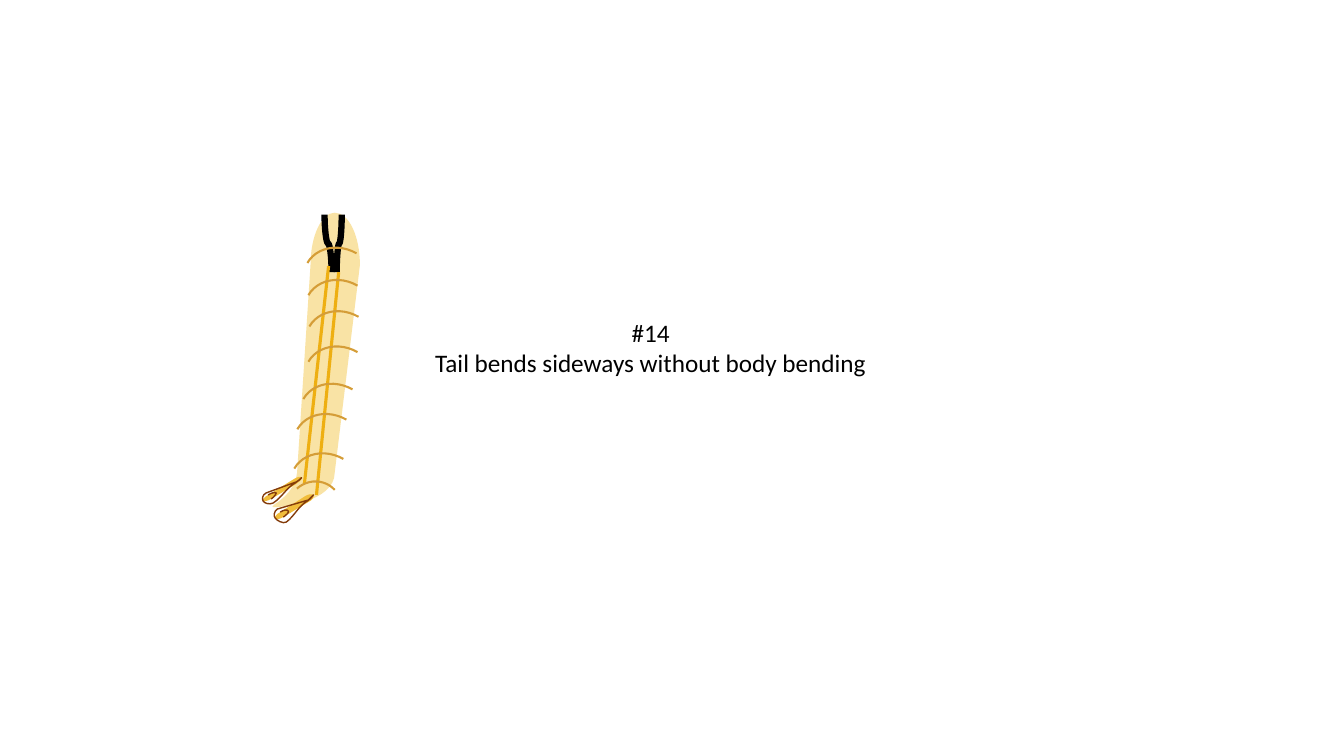
import math

from lxml import etree
from pptx import Presentation
from pptx import util as u
from pptx.dml import color
from pptx.enum import shapes, text
from pptx.oxml import ns

PX = 9144  # 100 px to the inch

# Outlines: a start point, then lines (x, y) and cubic curves (x1, y1, x2, y2, x, y)
BODY = [(357, 263), (332, 469), (332, 498, 277, 504, 271, 503),
        (265, 502, 295, 493, 295, 464), (308, 263),
        (308, 234, 319, 211, 332, 211), (346, 211, 357, 234, 357, 263)]

UPPER_CLAW = {
    "fill": [(294, 480), (269, 495), (265, 497, 261, 498, 261, 497),
             (260, 496, 262, 493, 266, 491), (292, 475),
             (295, 473, 299, 472, 299, 474), (300, 475, 298, 477, 294, 480)],
    "fold": [(266, 491), (269, 489, 273, 488, 274, 489),
             (274, 490, 272, 493, 269, 495)],
    "edge": [(293, 479), (284, 484, 280, 493, 271, 499),
             (267, 501, 262, 499, 261, 497), (260, 495, 260, 491, 264, 489),
             (294, 478), (298, 476, 300, 473, 299, 474),
             (299, 474, 296, 477, 293, 479)],
}
LOWER_CLAW = {
    "fill": [(306, 498), (281, 513), (277, 515, 274, 516, 273, 514),
             (272, 513, 274, 510, 278, 508), (303, 492),
             (306, 490, 310, 490, 311, 491), (312, 493, 310, 496, 306, 498)],
    "fold": [(278, 508), (281, 506, 285, 505, 286, 507),
             (287, 508, 284, 511, 281, 513)],
    "edge": [(305, 497), (296, 502, 292, 512, 284, 518),
             (281, 520, 274, 516, 273, 514), (271, 512, 272, 507, 275, 505),
             (306, 496), (309, 493, 311, 491, 311, 491),
             (311, 491, 308, 495, 305, 497)],
}
CLAW_FLAGS = {"fill": {"stroke": "0"}, "fold": {"fill": "none"},
              "edge": {"fill": "none"}}

# Left and top of each body ring
RINGS = [(305, 242), (306, 274), (307, 305), (306, 340),
         (301, 377), (295, 407), (292, 446)]


def px(length):
    return u.Emu(round(length * PX))


def rgb(value):
    return color.RGBColor.from_string(value)


def set_line(item, line, width):
    if line:
        item.line.color.rgb = rgb(line)
        item.line.width = u.Pt(width)
    else:
        item.line.fill.background()


def format_shape(shape, fill=None, line=None, width=1):
    shape.shadow.inherit = False
    if fill:
        shape.fill.solid()
        shape.fill.fore_color.rgb = rgb(fill)
    else:
        shape.fill.background()
    set_line(shape, line, width)


def add_child(parent, tag, **attributes):
    return etree.SubElement(parent, ns.qn(tag), **attributes)


def add_outline(slide, box, rotation, outlines, **style):
    """Draw (outline, flags) pairs as the curved paths of one rotated shape."""
    left, top, width, height = box
    builder = slide.shapes.build_freeform(px(left), px(top), scale=1.0)
    builder.add_line_segments([(px(left + width), px(top + height))], close=True)
    shape = builder.convert_to_shape()
    shape.rotation = rotation
    format_shape(shape, **style)
    cosine = math.cos(math.radians(rotation))
    sine = math.sin(math.radians(rotation))

    def add_point(parent, x, y):
        dx, dy = x - left - width / 2, y - top - height / 2
        add_child(parent, "a:pt",
                  x=str(px(width / 2 + dx * cosine + dy * sine)),
                  y=str(px(height / 2 - dx * sine + dy * cosine)))

    path_list = shape._element.spPr.find(".//" + ns.qn("a:pathLst"))
    path_list.clear()
    for outline, flags in outlines:
        route = add_child(path_list, "a:path", w=str(px(width)),
                          h=str(px(height)), **flags)
        for i, step in enumerate(outline):
            tag = "a:cubicBezTo" if len(step) == 6 else "a:lnTo" if i else "a:moveTo"
            command = add_child(route, tag)
            for x, y in zip(step[::2], step[1::2]):
                add_point(command, x, y)
        if outline[0] == outline[-1][-2:]:
            add_child(route, "a:close")


def add_claw(slide, box, rotation, claw):
    outlines = [(claw[part], flags) for part, flags in CLAW_FLAGS.items()]
    add_outline(slide, box, rotation, outlines, fill="F1BD3B", line="843C0B")


def add_line(slide, begin, end, line, width,
             kind=shapes.MSO_CONNECTOR.STRAIGHT, rotation=0):
    connector = slide.shapes.add_connector(kind, *map(px, begin + end))
    set_line(connector, line, width)
    properties = connector._element.spPr
    add_child(properties, "a:effectLst")
    if rotation:
        properties.find(ns.qn("a:xfrm")).set("rot", str(rotation * 60000))


def add_ring(slide, left, top, width=65, height=75, rotation=299.8):
    ring = slide.shapes.add_shape(shapes.MSO_SHAPE.ARC,
                                  *map(px, (left, top, width, height)))
    ring.rotation = rotation
    format_shape(ring, line="D59D37", width=1.5)


def add_text(slide, content, left, top, width, height, size=18,
             font="Calibri", ink="000000", align=text.PP_ALIGN.CENTER):
    box = slide.shapes.add_textbox(*map(px, (left, top, width, height)))
    frame = box.text_frame
    frame.word_wrap = False
    frame.auto_size = text.MSO_AUTO_SIZE.SHAPE_TO_FIT_TEXT
    frame.text = content
    for paragraph in frame.paragraphs:
        paragraph.alignment = align
        for run in paragraph.runs:
            run.font.name = font
            run.font.size = u.Pt(size)
            run.font.color.rgb = rgb(ink)


def main():
    presentation = Presentation()
    presentation.slide_width = px(1333.33)
    presentation.slide_height = px(750)
    slide = presentation.slides.add_slide(presentation.slide_layouts[6])

    # Body and the dark head marks, which are turned upright
    add_outline(slide, (167, 313, 292, 89), 90, [(BODY, {})], fill="F9E3A5")
    curve = shapes.MSO_CONNECTOR.CURVE
    add_line(slide, (308, 239), (365, 244), "000000", 4.5, curve, 90)
    add_line(slide, (354, 238), (297, 245), "000000", 4.5, curve, 270)

    # Tail claws
    add_claw(slide, (258, 480, 45, 12), 148.8, UPPER_CLAW)
    add_claw(slide, (270, 496, 45, 15), 148.6, LOWER_CLAW)

    # Long stripes
    add_line(slide, (326, 264), (302, 480), "EEAF12", 2.25)
    add_line(slide, (336, 270), (314, 491), "EEAF12", 2.25)

    # Body rings, with a smaller one at the tail
    for left, top in RINGS:
        add_ring(slide, left, top)
    add_ring(slide, 285, 478, 54, 52, 318)

    # Caption
    add_text(slide, "#14\nTail bends sideways without body bending",
             419, 309.4, 453, 70.7)

    presentation.save("out.pptx")


if __name__ == "__main__":
    main()
